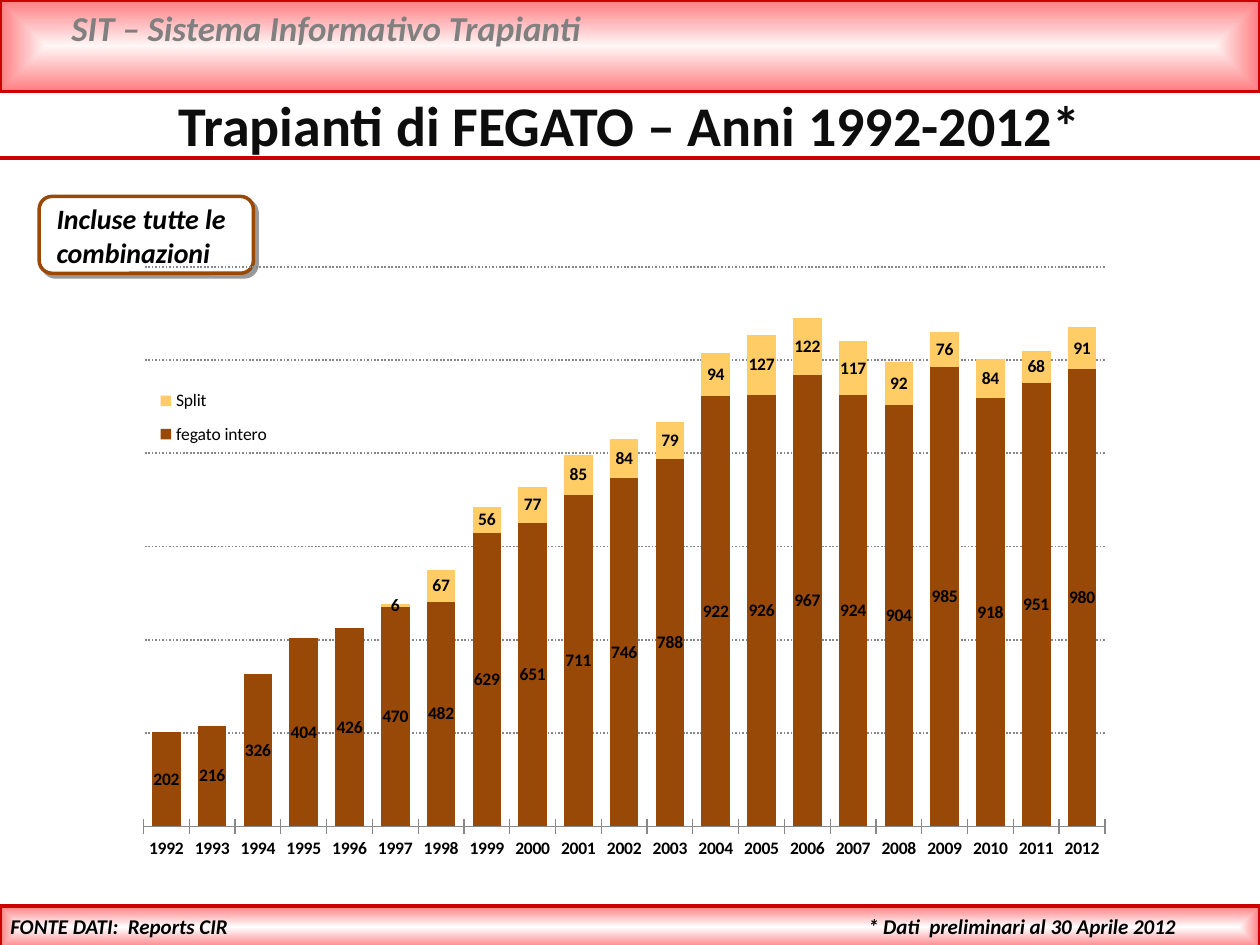
import pptx
import pptx.chart.data
import pptx.dml.color
import pptx.enum.chart
import pptx.enum.dml
import pptx.enum.shapes
import pptx.enum.text
import pptx.oxml
import pptx.oxml.ns
import pptx.util
from pptx.util import Cm, Pt

FONT = "Calibri"
RED, BROWN, AMBER, BLACK, GREY = "CC0000", "984807", "FFCC66", "000000", "888888"
LEFT = pptx.enum.text.PP_ALIGN.LEFT
CENTER = pptx.enum.text.PP_ALIGN.CENTER
RIGHT = pptx.enum.text.PP_ALIGN.RIGHT
RECTANGLE = pptx.enum.shapes.MSO_SHAPE.RECTANGLE
ROUNDED = pptx.enum.shapes.MSO_SHAPE.ROUNDED_RECTANGLE

# Content: positions are left, top, width, height in centimetres
BANDS = [((0, 0, 25.4, 1.85), "FFF6F6"), ((0, 18.26, 25.4, 0.86), "FFFFFF")]
BAND_EDGE = "FF7C80"
RULE_TOP = 3.18
CALLOUT = (0.79, 3.96, 4.32, 1.55)
# text, position, size, colour, italic, alignment, wrap
TEXTS = [
    ("SIT – Sistema Informativo Trapianti", (1.19, 0, 22.81, 1.12), 20, "808080", True, LEFT, True),
    ("Trapianti di FEGATO – Anni 1992-2012*", (0, 1.7, 25.4, 1.63), 32, "0D0D0D", False, CENTER, True),
    ("Incluse tutte le combinazioni", (0.89, 3.94, 4.19, 1.63), 16, BLACK, True, LEFT, True),
    ("FONTE DATI:  Reports CIR", (-0.1, 18.29, 4.95, 0.76), 12, BLACK, True, RIGHT, False),
    ("* Dati  preliminari al 30 Aprile 2012", (17.25, 18.29, 8.15, 0.76), 12, BLACK, True, LEFT, True),
]
CHART = (2.49, 5.13, 20.19, 12.4)
PLOT_LAYOUT = (0.02, 0.02, 0.96, 0.91)
LEGEND_LAYOUT = (0.02, 0.2, 0.14, 0.13)
YEARS = [str(year) for year in range(1992, 2013)]
SERIES = [
    ("fegato intero", BROWN, [202, 216, 326, 404, 426, 470, 482, 629, 651, 711, 746,
                              788, 922, 926, 967, 924, 904, 985, 918, 951, 980]),
    ("Split", AMBER, [None] * 5 + [6, 67, 56, 77, 85, 84, 79, 94, 127, 122, 117,
                                   92, 76, 84, 68, 91]),
]


def color(value):
    return pptx.dml.color.RGBColor.from_string(value)


def place(position):
    return [Cm(length) for length in position]


def element(xml):
    """Parse an XML fragment that uses the a: and c: prefixes."""
    head, rest = xml.split(">", 1)
    closing = "/" if head.endswith("/") else ""
    return pptx.oxml.parse_xml(
        f"{head.rstrip('/')} {pptx.oxml.ns.nsdecls('a', 'c')}{closing}>{rest}")


def add_outlined(page, kind, position, line_color):
    shape = page.shapes.add_shape(kind, *place(position))
    shape.shadow.inherit = False
    shape.line.color.rgb = color(line_color)
    shape.line.width = Pt(2)
    return shape


def add_band(page, position, middle):
    band = add_outlined(page, RECTANGLE, position, RED)
    band.fill.background()
    properties = band.element.spPr
    empty = properties.find(pptx.oxml.ns.qn("a:noFill"))
    properties.replace(empty, element(
        f'<a:gradFill rotWithShape="1"><a:gsLst>'
        f'<a:gs pos="0"><a:srgbClr val="{middle}"/></a:gs>'
        f'<a:gs pos="100000"><a:srgbClr val="{BAND_EDGE}"/></a:gs></a:gsLst>'
        '<a:path path="shape"><a:fillToRect l="50000" t="50000" r="50000" b="50000"/></a:path>'
        '</a:gradFill>'))


def add_rule(page, top):
    rule = page.shapes.add_connector(
        pptx.enum.shapes.MSO_CONNECTOR.STRAIGHT, 0, Cm(top), Cm(25.4), Cm(top))
    rule.line.color.rgb = color(RED)
    rule.line.width = Pt(2)
    rule.element.spPr.append(element("<a:effectLst/>"))


def add_callout(page):
    callout = add_outlined(page, ROUNDED, CALLOUT, BROWN)
    callout.fill.solid()
    callout.fill.fore_color.rgb = color("FFFFFF")
    effects = callout.element.spPr.find(pptx.oxml.ns.qn("a:effectLst"))
    effects.append(element(
        '<a:outerShdw blurRad="0" dist="38100" dir="2700000" algn="tl" rotWithShape="0">'
        '<a:srgbClr val="000000"><a:alpha val="40000"/></a:srgbClr></a:outerShdw>'))


def add_text(page, text, position, size, text_color, italic, alignment, wrap):
    box = page.shapes.add_textbox(*place(position))
    box.text_frame.word_wrap = wrap
    box.text_frame.text = text
    para = box.text_frame.paragraphs[0]
    para.alignment = alignment
    font = para.runs[0].font
    font.name, font.size, font.bold, font.italic = FONT, Pt(size), True, italic
    font.color.rgb = color(text_color)


def manual_layout(values, inner=False):
    target = '<c:layoutTarget val="inner"/>' if inner else ""
    modes = '<c:xMode val="edge"/><c:yMode val="edge"/>'
    sizes = "".join(f'<c:{name} val="{value}"/>' for name, value in zip("xywh", values))
    return element(f"<c:layout><c:manualLayout>{target}{modes}{sizes}</c:manualLayout></c:layout>")


def style_font(font, bold=False):
    font.name, font.size, font.bold = FONT, Pt(10), bold
    font.color.rgb = color(BLACK)


def add_chart(page):
    data = pptx.chart.data.CategoryChartData()
    data.categories = YEARS
    for name, _, values in SERIES:
        data.add_series(name, values)
    chart = page.shapes.add_chart(
        pptx.enum.chart.XL_CHART_TYPE.COLUMN_STACKED, *place(CHART), data).chart
    chart.has_title = False
    style_font(chart.font)

    # Columns and their labels
    plot = chart.plots[0]
    plot.gap_width, plot.overlap, plot.vary_by_categories = 60, 100, False
    for series, (_, fill_color, _) in zip(plot.series, SERIES):
        series.format.fill.solid()
        series.format.fill.fore_color.rgb = color(fill_color)
        series.data_labels.show_value = True
        style_font(series.data_labels.font, bold=True)

    # Axes
    years = chart.category_axis
    years.major_tick_mark = pptx.enum.chart.XL_TICK_MARK.CROSS
    years.format.line.color.rgb = color(GREY)
    style_font(years.tick_labels.font, bold=True)
    counts = chart.value_axis
    counts.visible = False
    counts.minimum_scale, counts.maximum_scale, counts.major_unit = 0, 1200, 200
    counts.has_major_gridlines = True
    grid = counts.major_gridlines.format.line
    grid.color.rgb = color(GREY)
    grid.width = Pt(1)
    grid.dash_style = pptx.enum.dml.MSO_LINE.ROUND_DOT

    # Legend laid over the plot
    chart.has_legend = True
    legend = chart.legend
    legend.position = pptx.enum.chart.XL_LEGEND_POSITION.LEFT
    legend.include_in_layout = False
    style_font(legend.font)

    # Fixed places for plot and legend
    area = chart.element.chart.plotArea
    legend_element = chart.element.find(".//" + pptx.oxml.ns.qn("c:legend"))
    for parent in (area, legend_element):
        for old in parent.findall(pptx.oxml.ns.qn("c:layout")):
            parent.remove(old)
    area.insert(0, manual_layout(PLOT_LAYOUT, inner=True))
    legend_element.insert(1, manual_layout(LEGEND_LAYOUT))
    overlay = legend_element.find(pptx.oxml.ns.qn("c:overlay"))
    overlay.set("val", "1")


def main():
    deck = pptx.Presentation()
    deck.slide_width, deck.slide_height = Cm(25.4), Cm(19.05)
    page = deck.slides.add_slide(deck.slide_layouts[6])
    for position, middle in BANDS:
        add_band(page, position, middle)
    add_rule(page, RULE_TOP)
    add_callout(page)
    for item in TEXTS:
        add_text(page, *item)
    add_chart(page)
    deck.save("out.pptx")


if __name__ == "__main__":
    main()
